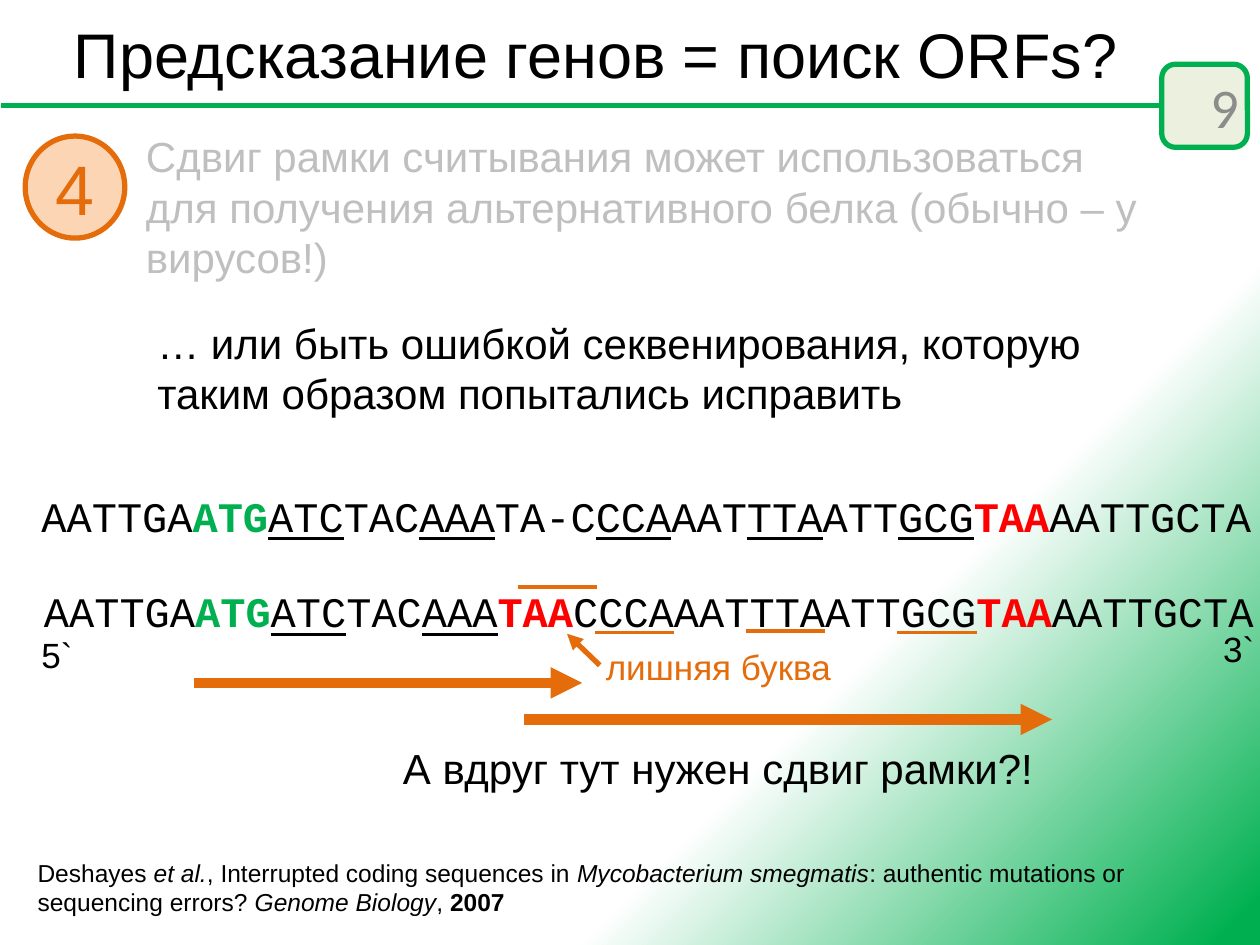
from dataclasses import dataclass
from typing import NamedTuple, Optional

from lxml import etree
from pptx import Presentation
from pptx import util as u
from pptx.dml.color import RGBColor
from pptx.enum import shapes, text
from pptx.oxml import parse_xml
from pptx.oxml.ns import nsdecls, qn

BLACK = RGBColor(0x00, 0x00, 0x00)
GREEN = RGBColor(0x00, 0xB0, 0x50)
RED = RGBColor(0xFF, 0x00, 0x00)
ORANGE = RGBColor(0xE4, 0x6C, 0x0A)
PEACH = RGBColor(0xFC, 0xD5, 0xB5)
PALE_GREEN = RGBColor(0xEB, 0xF1, 0xDE)
GREY = RGBColor(0x8C, 0x8C, 0x8C)
LIGHT_GREY = RGBColor(0xBF, 0xBF, 0xBF)

PX_PER_INCH = 100
SANS, MONO, NUMBER = "Arial", "Courier New", "Calibri"
LEFT, CENTER, RIGHT = text.PP_ALIGN.LEFT, text.PP_ALIGN.CENTER, text.PP_ALIGN.RIGHT


class Box(NamedTuple):
    x: int
    y: int
    w: int
    h: int


class Span(NamedTuple):
    text: str
    color: Optional[RGBColor] = None
    bold: bool = False
    italic: bool = False
    underline: bool = False


@dataclass
class Label:
    box: Box
    spans: list[Span]
    size: int = 24
    color: RGBColor = BLACK
    font: str = SANS
    wrap: bool = True
    align: text.PP_ALIGN = LEFT
    anchor: text.MSO_ANCHOR = text.MSO_ANCHOR.TOP


@dataclass
class Line:
    x1: int
    y1: int
    x2: int
    y2: int
    width: int = 2
    color: RGBColor = ORANGE
    arrow: bool = False


@dataclass
class Badge:
    kind: shapes.MSO_SHAPE
    box: Box
    fill: RGBColor
    line: RGBColor


def px(n: int) -> int:
    return u.Inches(n / PX_PER_INCH)


def write(sp, label: Label) -> None:
    tf = sp.text_frame
    tf.word_wrap = label.wrap
    tf.auto_size = text.MSO_AUTO_SIZE.NONE
    tf.vertical_anchor = label.anchor
    p = tf.paragraphs[0]
    p.alignment = label.align
    for span in label.spans:
        r = p.add_run()
        r.text = span.text
        r.font.name = label.font
        r.font.size = u.Pt(label.size)
        r.font.color.rgb = span.color or label.color
        r.font.bold = span.bold
        r.font.italic = span.italic
        r.font.underline = span.underline


def add_label(s, label: Label) -> None:
    write(s.shapes.add_textbox(*map(px, label.box)), label)


def add_line(s, line: Line) -> None:
    ends = map(px, (line.x1, line.y1, line.x2, line.y2))
    c = s.shapes.add_connector(shapes.MSO_CONNECTOR.STRAIGHT, *ends)
    c.line.color.rgb = line.color
    c.line.width = u.Pt(line.width)
    if line.arrow:
        etree.SubElement(c.line._get_or_add_ln(), qn("a:tailEnd"), type="triangle")
    etree.SubElement(c._element.spPr, qn("a:effectLst"))


def add_badge(s, badge: Badge):
    sp = s.shapes.add_shape(badge.kind, *map(px, badge.box))
    sp.shadow.inherit = False
    sp.fill.solid()
    sp.fill.fore_color.rgb = badge.fill
    sp.line.color.rgb = badge.line
    sp.line.width = u.Pt(3)
    return sp


def set_background(s) -> None:
    s.background.fill.solid()
    solid = s.background._cSld.bg.bgPr.find(qn("a:solidFill"))
    solid.getparent().replace(solid, parse_xml(
        f'<a:gradFill {nsdecls("a")} rotWithShape="1"><a:gsLst>'
        '<a:gs pos="69000"><a:srgbClr val="FFFFFF"/></a:gs>'
        f'<a:gs pos="98000"><a:srgbClr val="{GREEN}"/></a:gs></a:gsLst>'
        '<a:path path="circle"><a:fillToRect r="100000" b="100000"/></a:path>'
        '</a:gradFill>'))


def codon(letters: str) -> Span:
    return Span(letters, underline=True)


START = [Span("AATTGA"), Span("ATG", GREEN, bold=True),
         codon("ATC"), Span("TAC"), codon("AAA")]
STOP = Span("TAA", RED, bold=True)
END = [STOP, Span("AATTGCTA")]
SHIFTED = START + [Span("TA-C"), codon("CCA"), Span("AAT"), codon("TTA"),
                   Span("ATT"), codon("GCG")] + END
READ = START + [STOP, Span("CCCAAATTTAATTGCG")] + END

MIDDLE = text.MSO_ANCHOR.MIDDLE
TITLE = Label(Box(20, 2, 906, 81), [Span("Предсказание генов = поиск ORFs?")],
              size=36, align=CENTER, anchor=MIDDLE)
POINT_NUMBER = Label(Box(20, 108, 79, 81), [Span("4")], size=40, color=ORANGE,
                     align=CENTER, anchor=MIDDLE)
CITATION = [
    Span("Deshayes "), Span("et al.", italic=True),
    Span(", Interrupted coding sequences in "),
    Span("Mycobacterium smegmatis", italic=True),
    Span(": authentic mutations or sequencing errors? "),
    Span("Genome Biology", italic=True), Span(", "), Span("2007", bold=True),
]
LABELS = [
    Label(Box(760, 64, 233, 40), [Span("9")], size=32, color=GREY, font=NUMBER,
          align=RIGHT, anchor=MIDDLE),
    Label(Box(106, 99, 819, 131), [Span(
        "Сдвиг рамки считывания может использоваться для получения "
        "альтернативного белка (обычно – у вирусов!)")], color=LIGHT_GREY),
    Label(Box(115, 247, 819, 91), [Span(
        "… или быть ошибкой секвенирования, которую таким образом "
        "попытались исправить")]),
    Label(Box(23, 384, 988, 50), SHIFTED, font=MONO, wrap=False),
    Label(Box(25, 460, 988, 50), READ, font=MONO, wrap=False),
    Label(Box(23, 498, 45, 44), [Span("5`")], size=20, wrap=False),
    Label(Box(961, 493, 45, 44), [Span("3`")], size=20, wrap=False),
    Label(Box(471, 507, 246, 44), [Span("лишняя буква")], size=20, color=ORANGE),
    Label(Box(310, 584, 527, 50), [Span("А вдруг тут нужен сдвиг рамки?!")]),
    Label(Box(20, 676, 963, 57), CITATION, size=14),
]
FRAME_MARKS = [(411, 466), (472, 502), (592, 501), (712, 502)]
LINES = [
    Line(476, 528, 450, 503, width=3, arrow=True),
    Line(154, 542, 462, 542, width=6, arrow=True),
    Line(416, 571, 835, 571, width=6, arrow=True),
] + [Line(x, y, x + 63, y) for x, y in FRAME_MARKS]


def main() -> None:
    prs = Presentation()
    prs.slide_width, prs.slide_height = px(1000), px(750)
    s = prs.slides.add_slide(prs.slide_layouts[5])
    set_background(s)

    title = s.shapes.title
    title.left, title.top, title.width, title.height = map(px, TITLE.box)
    write(title, TITLE)

    add_line(s, Line(982, 84, 1, 84, width=3, color=GREEN))
    add_badge(s, Badge(shapes.MSO_SHAPE.ROUNDED_RECTANGLE, Box(922, 51, 68, 66),
                       PALE_GREEN, GREEN))
    circle = add_badge(s, Badge(shapes.MSO_SHAPE.OVAL, POINT_NUMBER.box, PEACH, ORANGE))
    write(circle, POINT_NUMBER)

    for label in LABELS:
        add_label(s, label)
    for line in LINES:
        add_line(s, line)
    prs.save("out.pptx")


if __name__ == "__main__":
    main()
